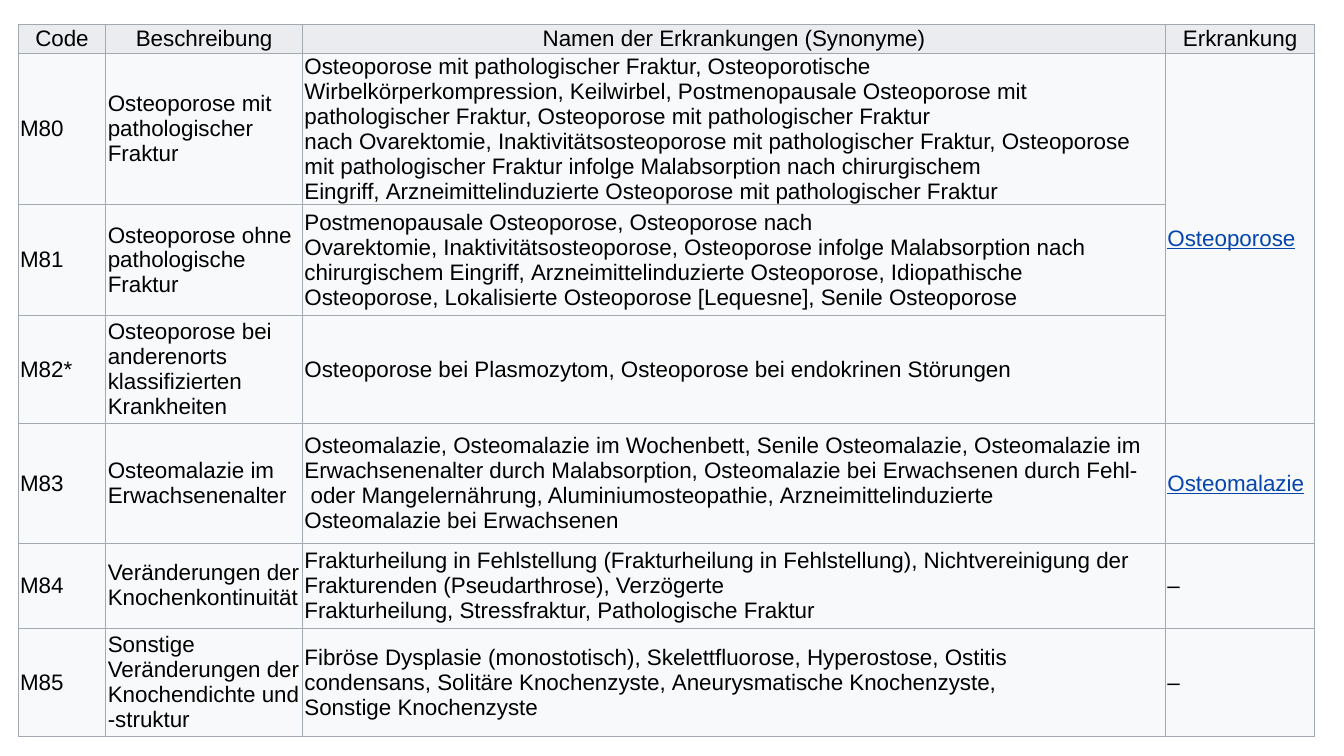
from lxml import etree
from pptx import Presentation
from pptx.dml.color import RGBColor
from pptx.enum.text import MSO_ANCHOR, PP_ALIGN
from pptx.oxml.ns import qn
from pptx.util import Inches, Pt

MIDDLE = MSO_ANCHOR.MIDDLE
LEFT, CENTER = PP_ALIGN.LEFT, PP_ALIGN.CENTER

COLORS = {
    "text": "000000",
    "link": "0645AD",
    "header": "EAECF0",
    "body": "F8F9FA",
    "border": "A2A9B1",
}
FONT = "Arial"
TIE, HARD_SPACE = "~", chr(160)
TABLE_BOX = (0.18, 0.24, 12.86, 6.96)
COLUMN_WIDTHS = [0.87, 1.95, 8.56, 1.48]
ROW_HEIGHTS = [0.29, 1.39, 1.1, 1.07, 1.19, 0.84, 1.08]
LINKED_DISEASES = {"Osteoporose", "Osteomalazie"}

HEADINGS = ["Code", "Beschreibung", "Namen der Erkrankungen (Synonyme)", "Erkrankung"]
DIAGNOSES = [
    ["M80", "Osteoporose mit pathologischer Fraktur",
     "Osteoporose~mit~pathologischer Fraktur,~Osteoporotische "
     "Wirbelkörperkompression,~Keilwirbel, Postmenopausale~Osteoporose mit "
     "pathologischer Fraktur, Osteoporose mit pathologischer Fraktur "
     "nach~Ovarektomie,~Inaktivitätsosteoporose~mit pathologischer Fraktur, Osteoporose "
     "mit pathologischer Fraktur infolge~Malabsorption~nach chirurgischem "
     "Eingriff,~Arzneimittelinduzierte Osteoporose~mit pathologischer Fraktur",
     "Osteoporose"],
    ["M81", "Osteoporose ohne pathologische Fraktur",
     "Postmenopausale Osteoporose,~Osteoporose nach "
     "Ovarektomie,~Inaktivitätsosteoporose, Osteoporose infolge~Malabsorption~nach "
     "chirurgischem Eingriff,~Arzneimittelinduzierte Osteoporose,~Idiopathische "
     "Osteoporose,~Lokalisierte Osteoporose~[Lequesne],~Senile Osteoporose",
     ""],
    ["M82*", "Osteoporose bei anderenorts klassifizierten Krankheiten",
     "Osteoporose bei~Plasmozytom, Osteoporose bei~endokrinen Störungen",
     ""],
    ["M83", "Osteomalazie im Erwachsenenalter",
     "Osteomalazie,~Osteomalazie im Wochenbett,~Senile Osteomalazie, Osteomalazie im "
     "Erwachsenenalter durch~Malabsorption, Osteomalazie bei Erwachsenen "
     "durch~Fehl-~oder~Mangelernährung, Aluminiumosteopathie,~Arzneimittelinduzierte "
     "Osteomalazie~bei Erwachsenen",
     "Osteomalazie"],
    ["M84", "Veränderungen der Knochenkontinuität",
     "Frakturheilung in Fehlstellung~(Frakturheilung~in~Fehlstellung),"
     "~Nichtvereinigung der Frakturenden~(Pseudarthrose),~Verzögerte "
     "Frakturheilung,~Stressfraktur,~Pathologische Fraktur",
     "–"],
    ["M85", "Sonstige Veränderungen der Knochendichte und -struktur",
     "Fibröse Dysplasie~(monostotisch),~Skelettfluorose,~Hyperostose,~Ostitis "
     "condensans,~Solitäre Knochenzyste,~Aneurysmatische Knochenzyste, "
     "Sonstige~Knochenzyste",
     "–"],
]


def write_text(frame, text, size=16, color="text", align=LEFT, underline=False):
    para = frame.paragraphs[0]
    para.alignment = align
    span = para.add_run()
    span.text = text.replace(TIE, HARD_SPACE)
    span.font.name = FONT
    span.font.size = Pt(size)
    span.font.underline = underline
    span.font.color.rgb = RGBColor.from_string(COLORS[color])


def style_cell(cell, fill):
    cell.margin_left = cell.margin_right = Inches(0.02)
    cell.margin_top = cell.margin_bottom = Inches(0.01)
    cell.vertical_anchor = MIDDLE
    properties = cell._tc.get_or_add_tcPr()
    for side in ("a:lnL", "a:lnR", "a:lnT", "a:lnB"):
        line = etree.SubElement(properties, qn(side), w=str(Pt(0.75)))
        solid = etree.SubElement(line, qn("a:solidFill"))
        etree.SubElement(solid, qn("a:srgbClr"), val=COLORS["border"])
    cell.fill.solid()
    cell.fill.fore_color.rgb = RGBColor.from_string(COLORS[fill])


def add_diagnosis_table(page, box):
    rows = [HEADINGS] + DIAGNOSES
    frame = page.shapes.add_table(len(rows), len(HEADINGS), *map(Inches, box))
    table = frame.table
    table.first_row = table.horz_banding = False
    for column, width in zip(table.columns, COLUMN_WIDTHS):
        column.width = Inches(width)
    for row, height in zip(table.rows, ROW_HEIGHTS):
        row.height = Inches(height)
    table.cell(1, 3).merge(table.cell(3, 3))

    for row_index, texts in enumerate(rows):
        is_header = row_index == 0
        for column_index, text in enumerate(texts):
            cell = table.cell(row_index, column_index)
            style_cell(cell, "header" if is_header else "body")
            if text:
                linked = text in LINKED_DISEASES
                write_text(cell.text_frame, text,
                           color="link" if linked else "text",
                           align=CENTER if is_header else LEFT,
                           underline=linked)


def main():
    deck = Presentation()
    deck.slide_width, deck.slide_height = Inches(13.33), Inches(7.5)
    page = deck.slides.add_slide(deck.slide_layouts[6])
    add_diagnosis_table(page, TABLE_BOX)
    deck.save("out.pptx")


if __name__ == "__main__":
    main()
